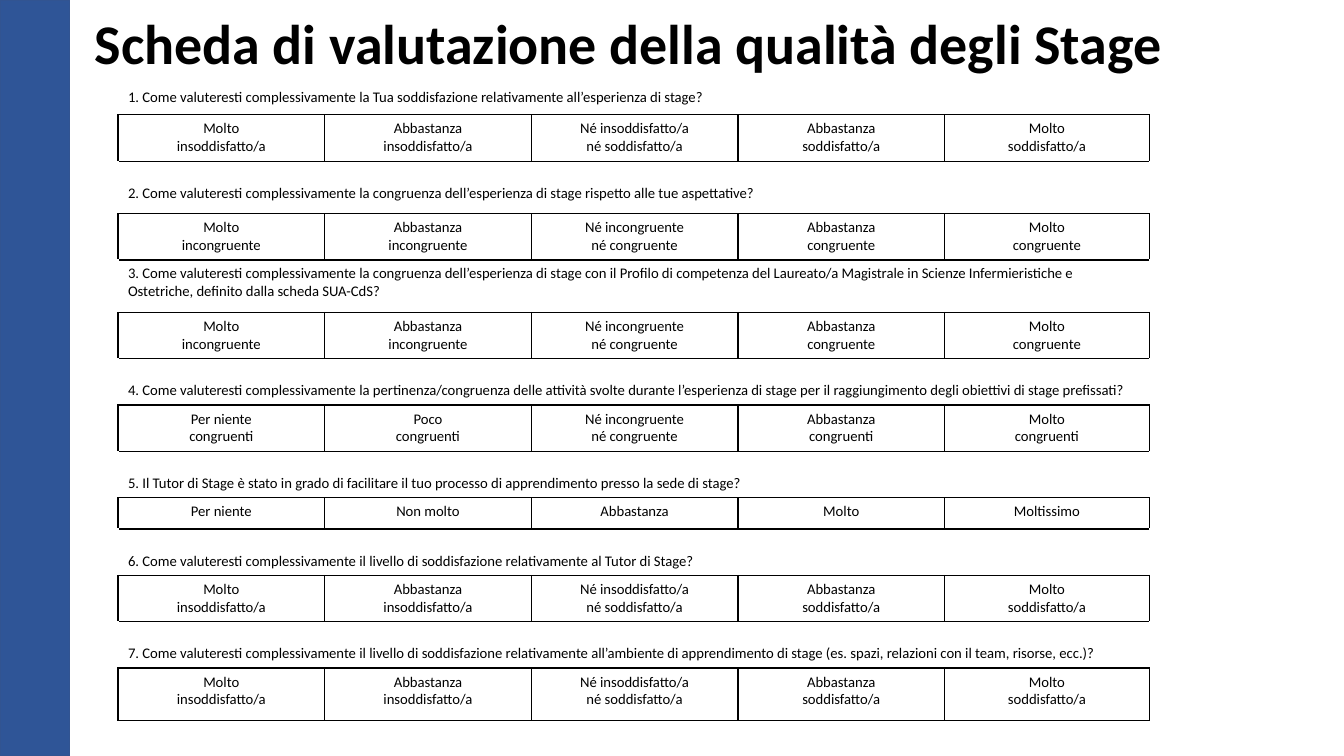
from dataclasses import dataclass

from lxml import etree
from pptx import Presentation
from pptx.dml.color import RGBColor
from pptx.enum.shapes import MSO_SHAPE
from pptx.enum.text import MSO_ANCHOR, PP_ALIGN
from pptx.oxml.ns import qn
from pptx.util import Inches, Pt

RECT = MSO_SHAPE.RECTANGLE
MIDDLE = MSO_ANCHOR.MIDDLE
CENTER = PP_ALIGN.CENTER

COLORS = {"text": "000000", "band": "2F5597", "band_line": "325491"}
FONT = "Calibri"
COL_WIDTHS = [2.05] * 4 + [2.03]
MARGIN = 0.05
LINE = 0.18  # height of one text line in the table
TWO_LINES = 0.46

SATISFACTION = [
    "Molto\ninsoddisfatto/a",
    "Abbastanza\ninsoddisfatto/a",
    "Né insoddisfatto/a\nné soddisfatto/a",
    "Abbastanza\nsoddisfatto/a",
    "Molto\nsoddisfatto/a",
]
CONGRUENCE = [
    "Molto\nincongruente",
    "Abbastanza\nincongruente",
    "Né incongruente\nné congruente",
    "Abbastanza\ncongruente",
    "Molto\ncongruente",
]
RELEVANCE = [
    "Per niente\ncongruenti",
    "Poco\ncongruenti",
    "Né incongruente\nné congruente",
    "Abbastanza\ncongruenti",
    "Molto\ncongruenti",
]
FREQUENCY = ["Per niente", "Non molto", "Abbastanza", "Molto", "Moltissimo"]


@dataclass
class Question:
    text: str
    answers: list[str]
    height: float = TWO_LINES
    answer_height: float = TWO_LINES
    lowered: bool = True  # text starts one line below the top of its row


QUESTIONS = [
    Question("1. Come valuteresti complessivamente la Tua soddisfazione relativamente "
             "all’esperienza di stage?", SATISFACTION, height=0.31, lowered=False),
    Question("2. Come valuteresti complessivamente la congruenza dell’esperienza di stage "
             "rispetto alle tue aspettative?", CONGRUENCE, height=0.52),
    Question("3. Come valuteresti complessivamente la congruenza dell’esperienza di stage "
             "con il Profilo di competenza del Laureato/a Magistrale in Scienze "
             "Infermieristiche e Ostetriche, definito dalla scheda SUA-CdS?",
             CONGRUENCE, height=0.52, lowered=False),
    Question("4. Come valuteresti complessivamente la pertinenza/congruenza delle attività "
             "svolte durante l’esperienza di stage per il raggiungimento degli obiettivi "
             "di stage prefissati?", RELEVANCE),
    Question("5. Il Tutor di Stage è stato in grado di facilitare il tuo processo di "
             "apprendimento presso la sede di stage?", FREQUENCY, answer_height=0.31),
    Question("6. Come valuteresti complessivamente il livello di soddisfazione "
             "relativamente al Tutor di Stage?", SATISFACTION),
    Question("7. Come valuteresti complessivamente il livello di soddisfazione "
             "relativamente all’ambiente di apprendimento di stage (es. spazi, relazioni "
             "con il team, risorse, ecc.)?", SATISFACTION, answer_height=0.52),
]


def rgb(name: str) -> RGBColor:
    return RGBColor.from_string(COLORS[name])


def format_text(tf, size: float, bold: bool = False) -> None:
    for p in tf.paragraphs:
        for r in p.runs:
            r.font.name = FONT
            r.font.size = Pt(size)
            r.font.bold = bold
            r.font.color.rgb = rgb("text")


def style_cell(cell, sides: str) -> None:
    """Draw 1 pt borders on the sides named by L, R, T, B and clear the fill."""
    tc_pr = cell._tc.get_or_add_tcPr()
    for side in sides:
        ln = etree.SubElement(tc_pr, qn(f"a:ln{side}"), w=str(Pt(1)))
        fill = etree.SubElement(ln, qn("a:solidFill"))
        etree.SubElement(fill, qn("a:srgbClr"), val=COLORS["text"])
    cell.fill.background()


def fill_cell(cell, text: str) -> None:
    cell.text_frame.text = text
    format_text(cell.text_frame, 10.5)


def add_title(slide, text: str) -> None:
    sp = slide.shapes.add_textbox(Inches(0.84), Inches(-0.27), Inches(12.11), Inches(1.45))
    tf = sp.text_frame
    tf.word_wrap = True
    tf.vertical_anchor = MIDDLE
    tf.text = text
    tf.paragraphs[0].line_spacing = 0.9
    format_text(tf, 40, bold=True)


def add_side_band(slide, height: int) -> None:
    sp = slide.shapes.add_shape(RECT, 0, 0, Inches(0.69), height)
    sp.shadow.inherit = False
    sp.fill.solid()
    sp.fill.fore_color.rgb = rgb("band")
    sp.line.color.rgb = rgb("band_line")
    sp.line.width = Pt(1)


def add_questionnaire(slide, questions: list[Question]) -> None:
    height = sum(q.height + q.answer_height for q in questions)
    table = slide.shapes.add_table(
        2 * len(questions), len(COL_WIDTHS), Inches(1.17), Inches(0.83),
        Inches(sum(COL_WIDTHS)), Inches(height)).table
    table.first_row = False
    table.horz_banding = False
    for column, width in zip(table.columns, COL_WIDTHS):
        column.width = Inches(width)

    last = len(COL_WIDTHS) - 1
    for i, question in enumerate(questions):
        row = 2 * i
        table.rows[row].height = Inches(question.height)
        table.rows[row + 1].height = Inches(question.answer_height)
        for col, answer in enumerate(question.answers):
            style_cell(table.cell(row, col), "TB" if i else "B")
            cell = table.cell(row + 1, col)
            fill_cell(cell, answer)
            for p in cell.text_frame.paragraphs:
                p.alignment = CENTER
            style_cell(cell, "LRTB")
        cell = table.cell(row, 0)
        cell.merge(table.cell(row, last))
        fill_cell(cell, question.text)
        cell.margin_top = Inches(MARGIN + LINE * question.lowered)


def main() -> None:
    prs = Presentation()
    prs.slide_width = Inches(13.33)
    prs.slide_height = Inches(7.5)
    slide = prs.slides.add_slide(prs.slide_layouts[6])
    add_title(slide, "Scheda di valutazione della qualità degli Stage")
    add_side_band(slide, prs.slide_height)
    add_questionnaire(slide, QUESTIONS)
    prs.save("out.pptx")


if __name__ == "__main__":
    main()
